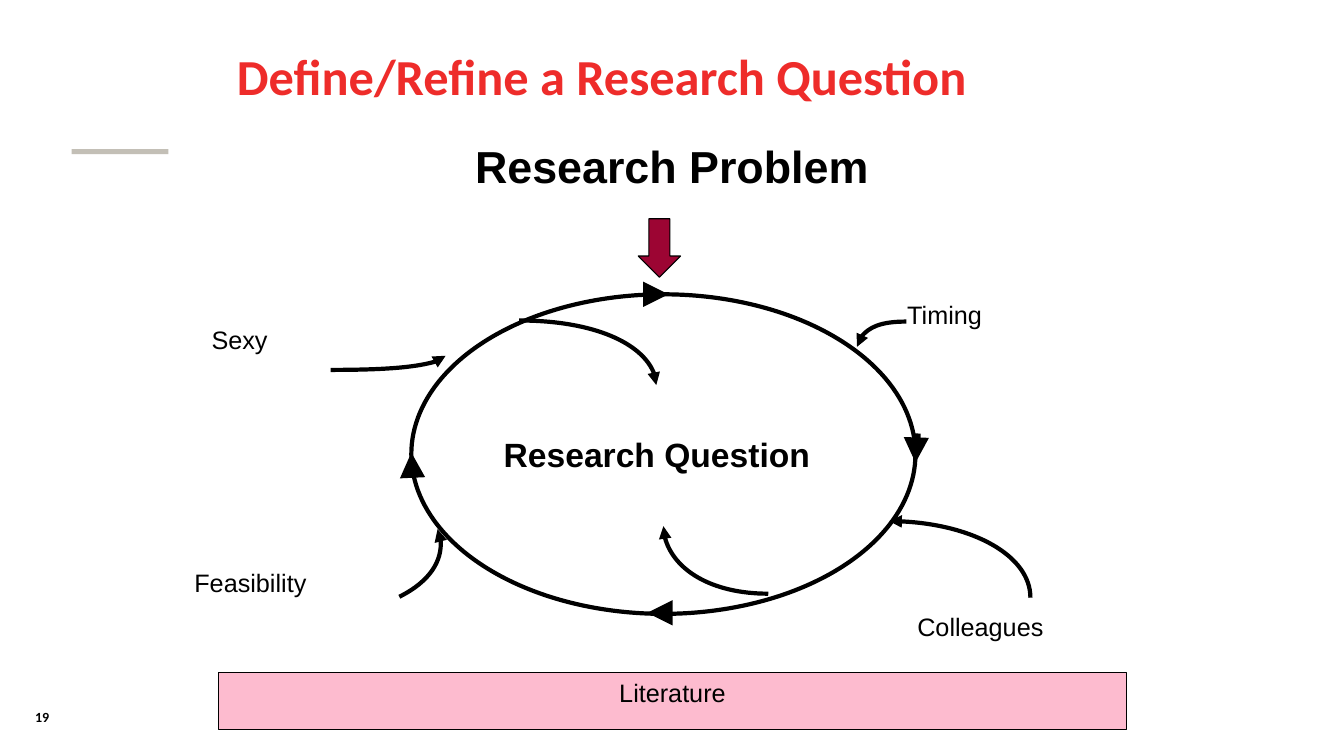
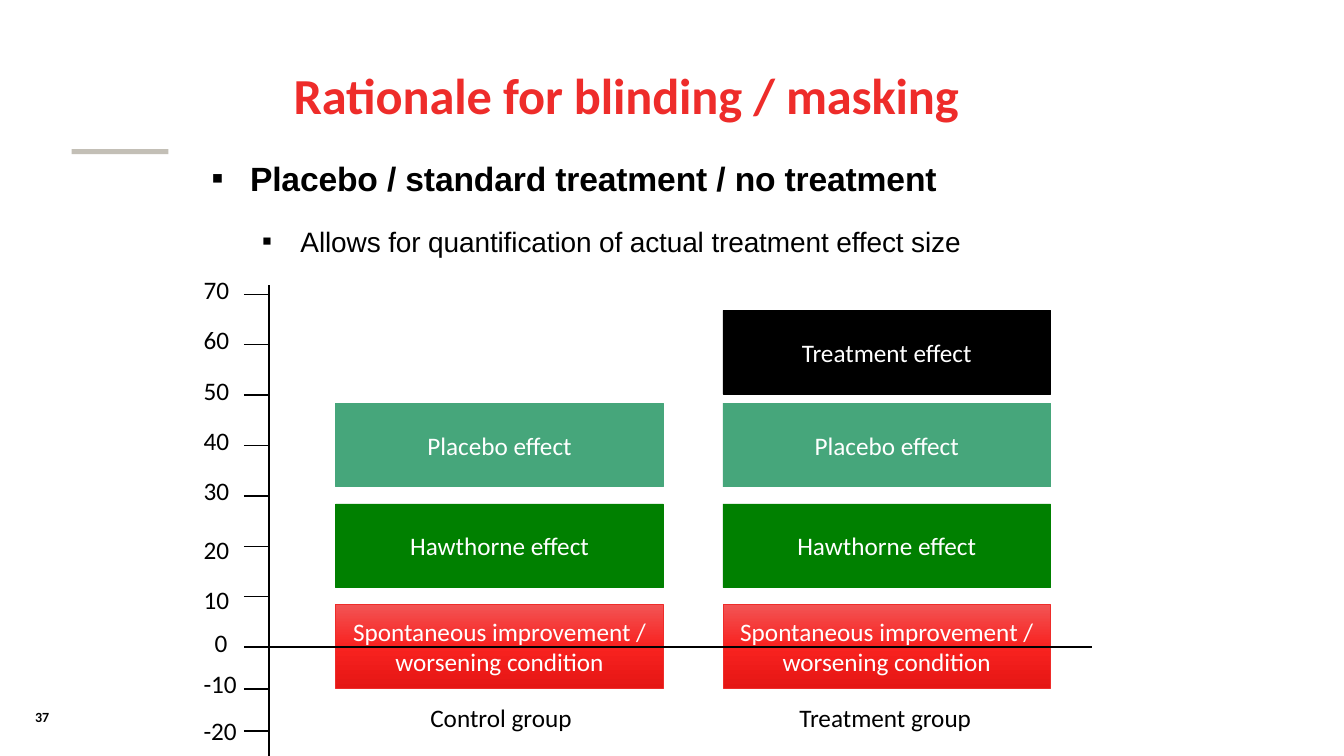
from copy import deepcopy

from lxml.etree import SubElement
from pptx import Presentation
from pptx.dml.color import RGBColor
from pptx.enum.shapes import MSO_CONNECTOR, MSO_SHAPE
from pptx.enum.text import MSO_ANCHOR, PP_ALIGN
from pptx.oxml.ns import qn
from pptx.util import Inches, Pt

COLORS = {
    "black": "000000", "white": "FFFFFF", "title": "EE2C2A", "accent": "C3BFB6",
    "pink": "FDBBCF", "maroon": "9C0533", "green": "008000", "mint": "46A67B",
    "red_top": "F25454", "red_mid": "F82220", "red_low": "E51614",
}

LABELS = [
    ("Research Problem", (4.42, 1.33, 4.49, 0.64), dict(size=32, bold=True, align=PP_ALIGN.CENTER)),
    ("Research Question", (4.85, 4.26, 3.33, 0.5), dict(size=24, bold=True, align=PP_ALIGN.CENTER)),
    ("Colleagues", (9, 6.02, 2.33, 0.57), {}),
    ("Feasibility", (1.83, 5.58, 1.97, 0.57), {}),
    ("Sexy", (2, 3.17, 1.46, 0.57), {}),
    ("Timing", (8.9, 2.92, 2.43, 0.57), {}),
]
CYCLE_BOX = (4.08, 2.92, 5, 3.17)
CYCLE_ARROWS = [
    ((6.42, 6.08), (6.51, 6.08), "headEnd"),
    ((6.55, 2.92), (6.63, 2.92), "tailEnd"),
    ((9.09, 4.3), (9.08, 4.59), "tailEnd"),
    ((4.09, 4.7), (4.08, 4.49), "tailEnd"),
]
CURVED_ARROWS = [
    ((8.82, 5.17), (10.22, 5.93), 0, "headEnd"),
    ((3.83, 5.8), (4.47, 5.37), 333.4, "tailEnd"),
    ((3.28, 3.67), (4.42, 3.53), 0, "tailEnd"),
    ((8.99, 3.19), (8.5, 3.44), 0, "tailEnd"),
    ((5.15, 3.18), (6.51, 3.82), 0, "tailEnd"),
    ((7.62, 5.89), (6.58, 5.22), 0, "tailEnd"),
]
ARC = 0.55

BULLETS = [
    ("Placebo / standard treatment / no treatment", 0, 24, True),
    ("Allows for quantification of actual treatment effect size", 1, 20, False),
]
EFFECTS = [
    ("Spontaneous improvement / worsening condition", 6, ("red_top", "red_mid", "red_low"), "title"),
    ("Hawthorne effect", 5, "green", "green"),
    ("Placebo effect", 4, "mint", "mint"),
    ("Treatment effect", 3.08, "black", "black"),
]
GROUPS = [("Control group", 3.33, 4.17, 3), ("Treatment group", 7.17, 7.83, 4)]
TICK_LABELS = [
    (70, 2.67), (60, 3.17), (50, 3.67), (40, 4.17), (30, 4.67),
    (20, 5.25), (10, 5.75), (0, 6.17), (-10, 6.58), (-20, 7.05),
]
AXIS_X, TICK_X, ZERO_Y = 2.67, 2.42, 6.42


def rgb(name):
    return RGBColor.from_string(COLORS[name])


def inches(values):
    return [Inches(v) for v in values]


def write(p, text, size=18, font="Arial", color="black", bold=False, align=PP_ALIGN.LEFT, spacing=0):
    p.alignment = align
    r = p.add_run()
    r.text = text
    r.font.size, r.font.name, r.font.bold = Pt(size), font, bold
    r.font.color.rgb = rgb(color)
    if spacing:
        r._r.get_or_add_rPr().set("spc", str(spacing))


def text_box(s, text, box, **fmt):
    tf = s.shapes.add_textbox(*inches(box)).text_frame
    tf.word_wrap = True
    write(tf.paragraphs[0], text, **fmt)


def set_fill(sp, fill):
    if fill is None:
        sp.fill.background()
    elif isinstance(fill, str):
        sp.fill.solid()
        sp.fill.fore_color.rgb = rgb(fill)
    else:
        sp.fill.gradient()
        sp.fill.gradient_angle = 270
        stops = sp.element.spPr.find(".//" + qn("a:gsLst"))
        stops.insert(1, deepcopy(stops[0]))
        for i, (stop, name) in enumerate(zip(sp.fill.gradient_stops, fill)):
            stop.position = i / 2
            stop.color.rgb = rgb(name)


def set_line(sp, color, width, arrow=None):
    if color is None:
        sp.line.fill.background()
        return
    sp.line.color.rgb = rgb(color)
    sp.line.width = Pt(width)
    if arrow:
        SubElement(sp.line._get_or_add_ln(), qn("a:" + arrow), type="triangle")


def shape(s, kind, box, fill=None, line=None, width=0.75):
    sp = s.shapes.add_shape(kind, *inches(box))
    sp.shadow.inherit = False
    set_fill(sp, fill)
    set_line(sp, line, width)
    return sp


def line(s, start, end, width=1, arrow=None):
    sp = s.shapes.add_connector(MSO_CONNECTOR.STRAIGHT, *inches(start + end))
    set_line(sp, "black", width, arrow)
    SubElement(sp.element.spPr, qn("a:effectLst"))


def curved_arrow(s, start, end, rotation, arrow):
    (x1, y1), (x2, y2) = start, end
    controls = [(x1 + ARC * (x2 - x1), y1), (x2, y2 + ARC * (y1 - y2)), end]
    builder = s.shapes.build_freeform(*inches(start))
    builder.add_line_segments([inches(point) for point in controls], close=False)
    sp = builder.convert_to_shape()
    outline = sp.element.spPr.find(".//" + qn("a:pathLst"))[0]
    segments = outline.findall(qn("a:lnTo"))
    curve = SubElement(outline, qn("a:cubicBezTo"))
    for segment in segments:
        curve.append(segment[0])
        outline.remove(segment)
    sp.rotation = rotation
    sp.shadow.inherit = False
    set_fill(sp, None)
    set_line(sp, "black", 3, arrow)


def new_slide(prs, title, box, number, margin=0.1, **fmt):
    s = prs.slides.add_slide(prs.slide_layouts[5])
    sp = s.shapes.title
    sp.left, sp.top, sp.width, sp.height = inches(box)
    tf = sp.text_frame
    tf.word_wrap = True
    tf.vertical_anchor = MSO_ANCHOR.MIDDLE
    tf.margin_left = tf.margin_right = Inches(margin)
    tf.margin_top = tf.margin_bottom = Inches(margin / 2)
    write(tf.paragraphs[0], title, size=36, font="Calibri", color="title", bold=True, **fmt)
    text_box(s, number, (0.25, 6.98, 1.14, 0.27), size=10, font="Calibri", bold=True)
    shape(s, MSO_SHAPE.RECTANGLE, (0.71, 1.48, 0.96, 0.05), "accent")
    return s


def question_slide(prs):
    s = new_slide(prs, "Define/Refine a Research Question", (2.25, 0.33, 9.08, 0.92), "19")
    s.shapes.title.text_frame.paragraphs[0].line_spacing = 0.9
    shape(s, MSO_SHAPE.OVAL, CYCLE_BOX, line="black", width=3)
    sp = shape(s, MSO_SHAPE.RECTANGLE, (2.17, 6.67, 9, 0.57), "pink", "black")
    sp.text_frame.vertical_anchor = MSO_ANCHOR.TOP
    write(sp.text_frame.paragraphs[0], "Literature", align=PP_ALIGN.CENTER)
    for start, end, arrow in CYCLE_ARROWS:
        line(s, start, end, width=6, arrow=arrow)
    for text, box, fmt in LABELS:
        text_box(s, text, box, **fmt)
    for curve in CURVED_ARROWS:
        curved_arrow(s, *curve)
    shape(s, MSO_SHAPE.DOWN_ARROW, (6.33, 2.17, 0.42, 0.58), "maroon", "black")


def bullet_list(s):
    tf = s.shapes.add_textbox(*inches((2.09, 1.28, 8.87, 1.72))).text_frame
    tf.word_wrap = True
    tf.margin_left = tf.margin_right = tf.margin_bottom = 0
    tf.margin_top = Inches(0.09)
    for i, (text, level, size, bold) in enumerate(BULLETS):
        p = tf.add_paragraph() if i else tf.paragraphs[0]
        p.level = level
        p.line_spacing = 1.5
        p.space_before = Pt(6.6 if i else 0)
        pPr = p._p.get_or_add_pPr()
        pPr.set("marL", str(Inches(0.39 + 0.5 * level)))
        pPr.set("indent", str(Inches(-0.38)))
        SubElement(pPr, qn("a:buFont"), typeface="Calibri")
        SubElement(pPr, qn("a:buChar"), char="▪")
        write(p, text, size=size, bold=bold, spacing=-10)


def blinding_slide(prs):
    s = new_slide(prs, "Rationale for blinding / masking", (0.59, 0.63, 11.24, 0.62), "37",
                  margin=0, align=PP_ALIGN.CENTER, spacing=-10)
    bullet_list(s)
    for group, bar_x, label_x, count in GROUPS:
        for text, top, fill, edge in EFFECTS[:count]:
            sp = shape(s, MSO_SHAPE.RECTANGLE, (bar_x, top, 3.25, 0.83), fill, edge, 0.5)
            sp.text_frame.word_wrap = True
            sp.text_frame.vertical_anchor = MSO_ANCHOR.MIDDLE
            write(sp.text_frame.paragraphs[0], text, font="Calibri", color="white", align=PP_ALIGN.CENTER)
        text_box(s, group, (label_x, 6.92, 2, 0.4), font="Calibri")
    line(s, (AXIS_X, 2.83), (AXIS_X, 7.5))
    line(s, (10.83, ZERO_Y), (TICK_X, ZERO_Y))
    for value, top in TICK_LABELS:
        if value:
            y = ZERO_Y - value / (20 if value > 0 else 24)
            line(s, (TICK_X, y), (AXIS_X, y))
        left = 1.92 if value else 2.03
        text_box(s, str(value), (left, top, 0.58, 0.4), font="Calibri")


def main():
    prs = Presentation()
    prs.slide_width, prs.slide_height = Inches(13.33), Inches(7.5)
    question_slide(prs)
    blinding_slide(prs)
    prs.save("out.pptx")


if __name__ == "__main__":
    main()
